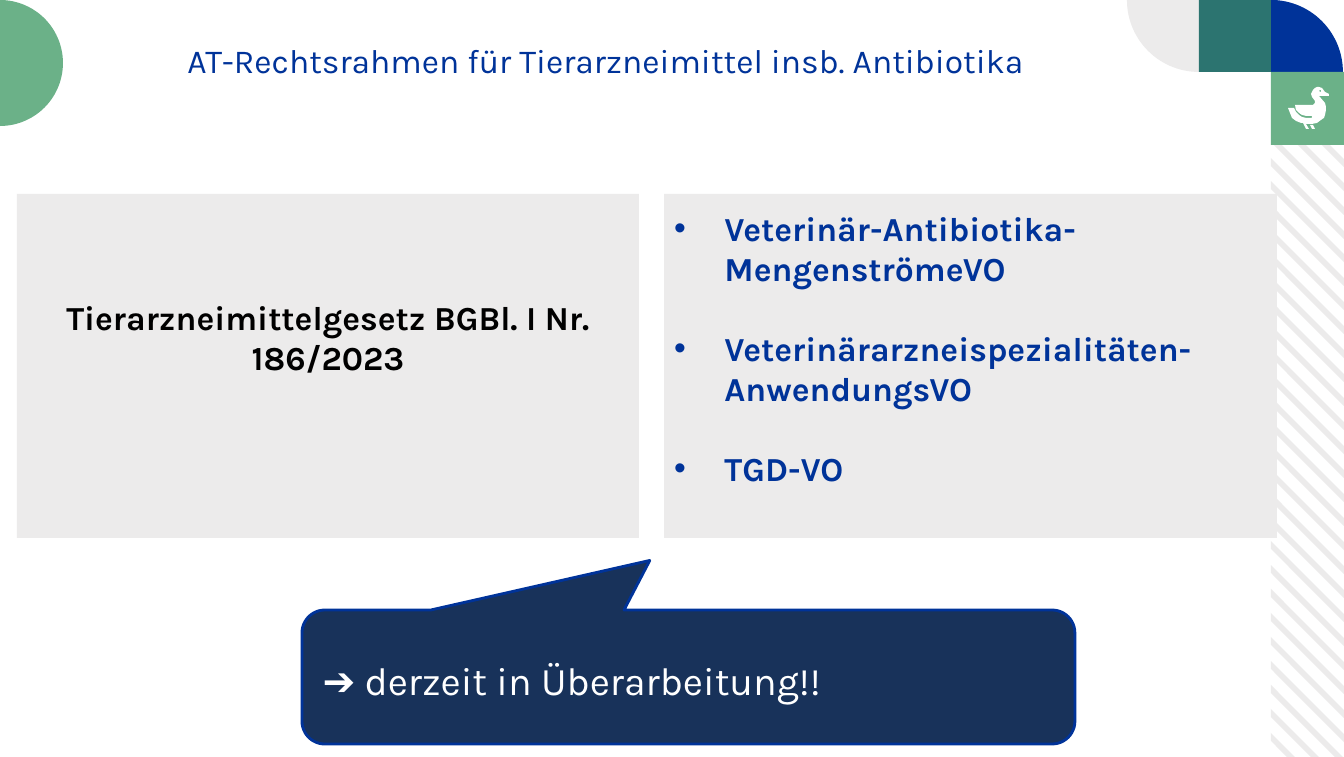
import math
import pptx
import pptx.dml.color
import pptx.enum.shapes
import pptx.enum.text
import pptx.oxml.ns
import pptx.util
from lxml import etree

PX = 914400 / 100.8
COLORS = {
    "grey": "ECEBEB",
    "teal": "2C7470",
    "green": "6BB188",
    "blue": "003399",
    "navy": "18325A",
    "white": "FFFFFF",
    "black": "000000",
}
SHAPE = pptx.enum.shapes.MSO_SHAPE
ALIGN = pptx.enum.text.PP_ALIGN
ANCHOR = pptx.enum.text.MSO_ANCHOR


def write(tf, text, size=24, color="blue", bold=False, align=ALIGN.LEFT,
          anchor=ANCHOR.MIDDLE, top=5, bottom=5, left=10, gap=0, bullet=None):
    tf.word_wrap = True
    tf.auto_size = pptx.enum.text.MSO_AUTO_SIZE.NONE
    tf.vertical_anchor = anchor
    tf.margin_top, tf.margin_bottom = round(top * PX), round(bottom * PX)
    tf.margin_left, tf.margin_right = round(left * PX), round(10 * PX)
    for i, line in enumerate(text.split("\n")):
        p = tf.add_paragraph() if i else tf.paragraphs[0]
        p.alignment = align
        p.line_spacing = 1.0
        p.space_before = pptx.util.Pt(gap if i else 0)
        if bullet:
            pPr = p._p.get_or_add_pPr()
            pPr.set("marL", "457200")
            pPr.set("indent", "-457200")
            etree.SubElement(pPr, pptx.oxml.ns.qn("a:buChar")).set("char", bullet)
        r = p.add_run()
        r.text = line
        r.font.name = "Karla"
        r.font.size = pptx.util.Pt(size)
        r.font.bold = bold
        r.font.color.rgb = pptx.dml.color.RGBColor.from_string(COLORS[color])


def outline(contours, color):
    contours = [[(x * PX, y * PX) for x, y in pts] for pts in contours]
    fb = s.shapes.build_freeform(*contours[0][0], scale=1.0)
    for i, pts in enumerate(contours):
        if i:
            fb.move_to(*pts[0])
        fb.add_line_segments(pts[1:], close=True)
    sp = fb.convert_to_shape()
    sp.shadow.inherit = False
    sp.fill.solid()
    sp.fill.fore_color.rgb = pptx.dml.color.RGBColor.from_string(COLORS[color])
    sp.line.fill.background()
    return sp


prs = pptx.Presentation()
prs.slide_width, prs.slide_height = round(1344 * PX), round(757 * PX)
s = prs.slides.add_slide(prs.slide_layouts[1])
title, body = s.placeholders

LEFT, RIGHT, TOP, BOTTOM = 1271, 1344, 145, 757
stripes = []
for k in range(-3, 25):
    y = 158 + k * 575 // 24
    edges = []
    for edge in (y, y + 8):
        start, end = max(0, TOP - edge), min(RIGHT - LEFT, BOTTOM - edge)
        edges.append([(LEFT + start, edge + start), (LEFT + end, edge + end)])
    stripes.append(edges[0] + edges[1][::-1])
title.element.addprevious(outline(stripes, "grey").element)

for cx, cy, radius, first, last, color in [
    (1271, 72, 72, -90, 0, "blue"),
    (1199, 0, 72, 90, 180, "grey"),
    (0, 63, 63, -90, 90, "green"),
]:
    arc = [(cx + radius * math.cos(math.radians(a)), cy + radius * math.sin(math.radians(a)))
           for a in range(first, last + 1, 3)]
    outline([[(cx, cy)] + arc], color)

panels = {}
for name, kind, x, y, w, h, color in [
    ("teal square", SHAPE.RECTANGLE, 1199, 0, 72, 72, "teal"),
    ("green square", SHAPE.RECTANGLE, 1271, 72, 73, 73, "green"),
    ("law", SHAPE.RECTANGLE, 17, 194, 622, 344, "grey"),
    ("callout", SHAPE.ROUNDED_RECTANGULAR_CALLOUT, 302, 610, 773, 134, "navy"),
]:
    sp = s.shapes.add_shape(kind, *[round(v * PX) for v in (x, y, w, h)])
    sp.shadow.inherit = False
    sp.fill.solid()
    sp.fill.fore_color.rgb = pptx.dml.color.RGBColor.from_string(COLORS[color])
    sp.line.fill.background()
    panels[name] = sp

goose = [
    (1329, 94), (1325, 92), (1322, 88), (1319, 87), (1317, 87), (1315, 88), (1313, 90),
    (1312, 92), (1311, 94), (1312, 97), (1315, 101), (1315, 103), (1313, 105), (1295, 105),
    (1296, 110), (1299, 113), (1302, 115), (1306, 116), (1312, 116), (1312, 118),
    (1306, 118), (1302, 117), (1299, 115), (1296, 112), (1294, 108), (1288, 108),
    (1290, 113), (1292, 118), (1296, 121), (1301, 123), (1303, 123), (1306, 129),
    (1309, 129), (1306, 124), (1312, 124), (1317, 123), (1321, 120), (1324, 118),
    (1325, 115), (1326, 110), (1326, 107), (1325, 103), (1319, 96), (1329, 96),
]
leg = [(1315, 129), (1313, 125), (1310, 125), (1312, 129)]
eye = [(1319, 91), (1320, 90), (1321, 90), (1321, 92), (1320, 92)]
outline([goose, leg, eye], "white")

for sp, box in [(title, (84, 34, 1043, 52)), (body, (664, 194, 613, 344))]:
    sp.left, sp.top, sp.width, sp.height = [round(v * PX) for v in box]
body.fill.solid()
body.fill.fore_color.rgb = pptx.dml.color.RGBColor.from_string(COLORS["grey"])

callout = panels["callout"]
callout.line.color.rgb = pptx.dml.color.RGBColor.from_string(COLORS["blue"])
callout.line.width = pptx.util.Pt(2)
for i, value in enumerate((-0.05, -0.87, 0.17)):
    callout.adjustments[i] = value

write(title.text_frame, "AT-Rechtsrahmen für Tierarzneimittel insb. Antibiotika", align=ALIGN.CENTER)
write(panels["law"].text_frame, "Tierarzneimittelgesetz BGBl. I Nr. 186/2023",
      color="black", bold=True, align=ALIGN.CENTER, bottom=63)
write(body.text_frame,
      "Veterinär-Antibiotika-MengenströmeVO\n"
      "Veterinärarzneispezialitäten-AnwendungsVO\n"
      "TGD-VO",
      bold=True, anchor=ANCHOR.TOP, top=14, gap=28, bullet="•")
write(callout.text_frame, "➔ derzeit in Überarbeitung!!", size=28, color="white", top=11, left=14)

prs.save("out.pptx")
